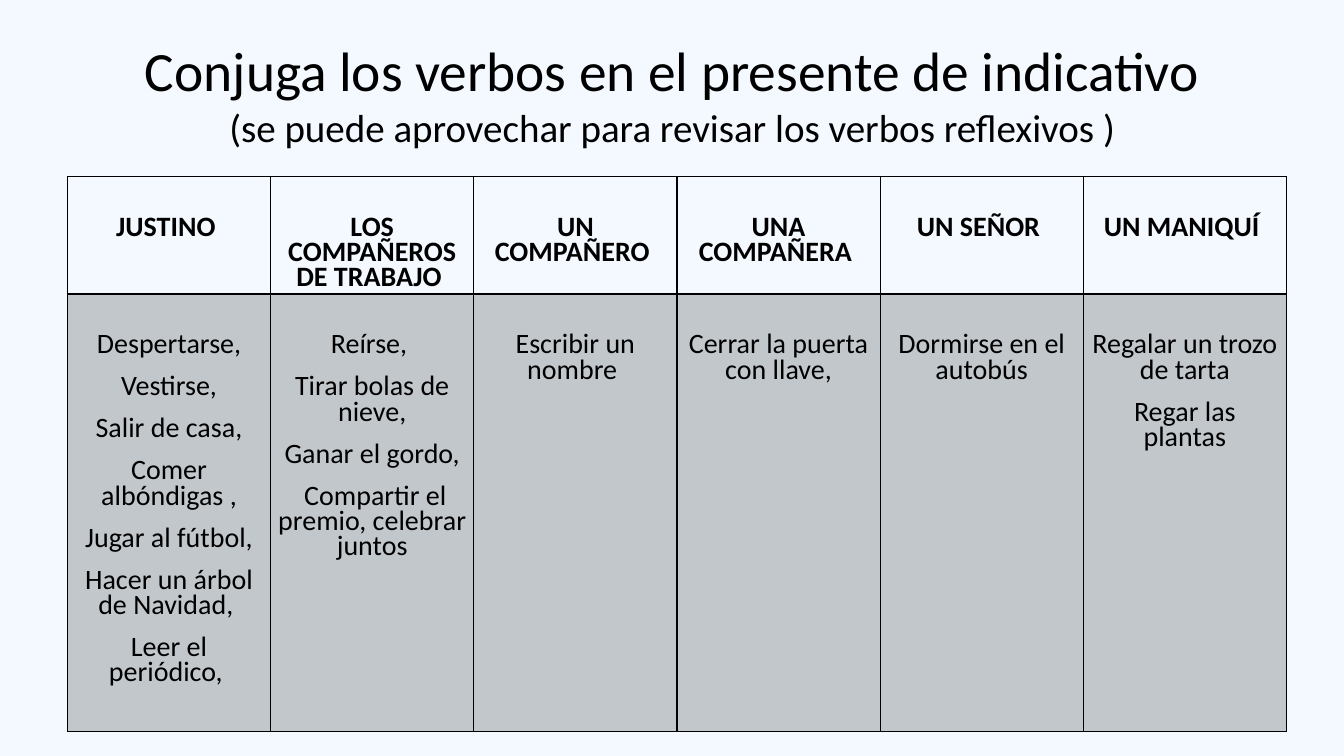
import pptx
import pptx.dml.color
import pptx.enum.text
import pptx.oxml
import pptx.oxml.ns
import pptx.util
from pptx.util import Cm, Pt

FONT = "Calibri"
COLUMNS = [
    ("JUSTINO ", ["Despertarse,", "Vestirse,", "Salir de casa,", "Comer albóndigas ,",
                  "Jugar al fútbol,", "Hacer un árbol de Navidad, ", "Leer el periódico, "]),
    ("LOS COMPAÑEROS DE TRABAJO ", ["Reírse, ", "Tirar bolas de nieve,", "Ganar el gordo,",
                                    " Compartir el premio, celebrar juntos"]),
    ("UN COMPAÑERO ", ["Escribir un nombre "]),
    ("UNA COMPAÑERA ", ["Cerrar la puerta con llave,"]),
    ("UN SEÑOR ", ["Dormirse en el autobús"]),
    ("UN MANIQUÍ ", ["Regalar un trozo de tarta", "Regar las plantas"]),
]


def rgb(value):
    return pptx.dml.color.RGBColor.from_string(value)


def set_borders(cell, bottom_width):
    """Draw black borders of 1 pt, with a width of its own for the bottom one."""
    tcPr = cell._tc.get_or_add_tcPr()
    for i, side in enumerate("LRTB"):
        width = Pt(bottom_width if side == "B" else 1)
        tcPr.insert(i, pptx.oxml.parse_xml(
            f'<a:ln{side} {pptx.oxml.ns.nsdecls("a")} w="{width}"><a:solidFill>'
            f'<a:srgbClr val="000000"/></a:solidFill></a:ln{side}>'))


prs = pptx.Presentation()
prs.slide_width, prs.slide_height = Cm(33.87), Cm(19.05)
s = prs.slides.add_slide(prs.slide_layouts[5])
s.background.fill.solid()
s.background.fill.fore_color.rgb = rgb("F3F9FF")

# Title
title = s.shapes.title
title.left, title.top, title.width, title.height = Cm(1.7), Cm(0.76), Cm(30.48), Cm(3.18)
tf = title.text_frame
tf.text = ("Conjuga los verbos en el presente de indicativo\v"
           "(se puede aprovechar para revisar los verbos reflexivos )")
tf.auto_size = pptx.enum.text.MSO_AUTO_SIZE.NONE
tf.vertical_anchor = pptx.enum.text.MSO_ANCHOR.MIDDLE
p = tf.paragraphs[0]
p.alignment = pptx.enum.text.PP_ALIGN.CENTER
p.font.size = Pt(39.6)
for r, size in zip(p.runs, (39.6, 27.9)):
    r.font.name, r.font.size = FONT, Pt(size)
    r.font.color.rgb = rgb("000000")

# Verb table: one column per character, a heading row and a verb row
table = s.shapes.add_table(2, len(COLUMNS), Cm(1.7), Cm(4.45), Cm(30.72), Cm(13.97)).table
table.first_row = table.horz_banding = False
for row, height in zip(table.rows, (2.96, 11.01)):
    row.height = Cm(height)

for col, (character, verbs) in enumerate(COLUMNS):
    table.columns[col].width = Cm(5.12)
    for row, lines in enumerate(([character], verbs)):
        cell = table.cell(row, col)
        cell.margin_left = cell.margin_right = Cm(0.18)
        cell.margin_top, cell.margin_bottom = Pt(30), 0
        if row == 0:
            cell.fill.background()
        else:
            cell.fill.solid()
            cell.fill.fore_color.rgb = rgb("000000")
            black = cell._tc.tcPr.find(".//" + pptx.oxml.ns.qn("a:srgbClr"))
            black.append(pptx.oxml.parse_xml(
                f'<a:alpha {pptx.oxml.ns.nsdecls("a")} val="20000"/>'))
        set_borders(cell, 2 if row == 0 else 1)

        cell.text_frame.text = "\n".join(lines)
        for p in cell.text_frame.paragraphs:
            p.alignment = pptx.enum.text.PP_ALIGN.CENTER
            p.line_spacing = Pt(18)
            p.space_before = p.space_after = Pt(6)
            font = p.runs[0].font
            font.name, font.size, font.bold = FONT, Pt(20), row == 0
            font.color.rgb = rgb("000000")

prs.save("out.pptx")
